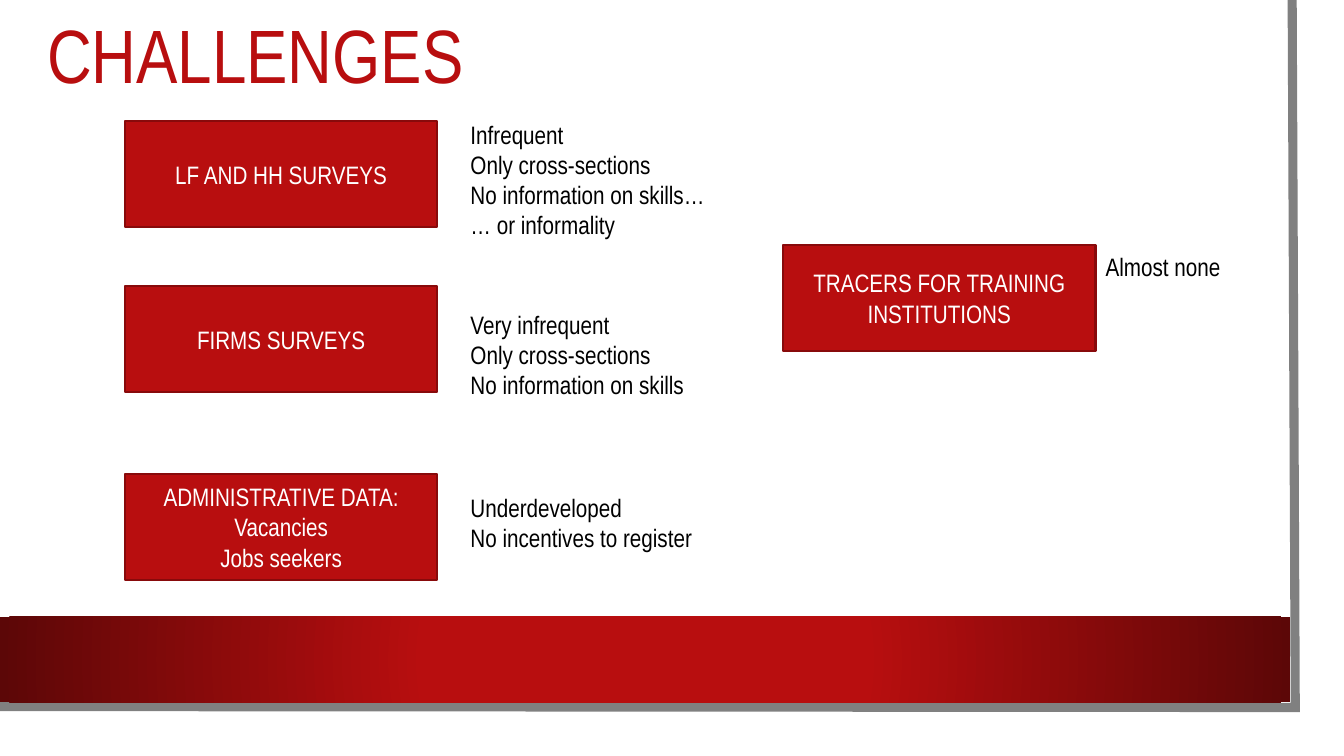
"""Build the slide on the challenges of labour market data sources."""
import pptx
import pptx.dml.color
import pptx.enum.shapes
import pptx.enum.text
import pptx.oxml.ns
import pptx.util
from lxml import etree

Pt = pptx.util.Pt
RGBColor = pptx.dml.color.RGBColor
RECTANGLE = pptx.enum.shapes.MSO_SHAPE.RECTANGLE
ANCHOR = pptx.enum.text.MSO_ANCHOR
ALIGN = pptx.enum.text.PP_ALIGN
AUTO_SIZE = pptx.enum.text.MSO_AUTO_SIZE
qn = pptx.oxml.ns.qn

RED = RGBColor(0xB8, 0x0E, 0x0F)
DARK_RED = RGBColor(0x5C, 0x07, 0x07)
OUTLINE_RED = RGBColor(0x88, 0x0A, 0x0B)
GRAY = RGBColor(0x80, 0x80, 0x80)
WHITE = RGBColor(0xFF, 0xFF, 0xFF)
BLACK = RGBColor(0, 0, 0)

BOX_LEFT, BOX_WIDTH, BOX_HEIGHT = 89.3, 223.2, 75.8
NOTE_LEFT, NOTE_WIDTH, LINE_HEIGHT, NOTE_PADDING = 329, 249.8, 21.8, 7.2

SOURCES = [
    (86.4, "LF AND HH SURVEYS", 81.4,
     "Infrequent\nOnly cross-sections\nNo information on skills…\n… or informality"),
    (204.5, "FIRMS SURVEYS", 217.4,
     "Very infrequent\nOnly cross-sections\nNo information on skills"),
    (338.4, "ADMINISTRATIVE DATA:\nVacancies\nJobs seekers", 347.8,
     "Underdeveloped\nNo incentives to register"),
]


class SlideBuilder:
    """Hold the text style and the slide, and add elements to it."""

    def __init__(self, slide, font_name="Arial Narrow", font_size=18):
        self.slide = slide
        self.font_name = font_name
        self.font_size = font_size

    def set_text(self, shape, text, color, size=None, align=ALIGN.LEFT):
        """Fill a shape with styled paragraphs, one for each line."""
        frame = shape.text_frame
        frame.text = text
        frame.word_wrap = True
        for paragraph in frame.paragraphs:
            paragraph.alignment = align
            for run in paragraph.runs:
                run.font.name = self.font_name
                run.font.size = Pt(size or self.font_size)
                run.font.color.rgb = color
        return frame

    def title(self, text, left, top, width, height):
        """Add the large heading."""
        shape = self.slide.shapes.add_textbox(Pt(left), Pt(top), Pt(width), Pt(height))
        frame = self.set_text(shape, text, RED, size=54)
        frame.vertical_anchor = ANCHOR.MIDDLE
        frame.paragraphs[0].line_spacing = 0.9

    def rectangle(self, left, top, width, height):
        """Add a plain rectangle without shadow."""
        shape = self.slide.shapes.add_shape(
            RECTANGLE, Pt(left), Pt(top), Pt(width), Pt(height))
        shape.shadow.inherit = False
        return shape

    def source_box(self, text, left, top):
        """Add a red box naming a data source."""
        shape = self.rectangle(left, top, BOX_WIDTH, BOX_HEIGHT)
        shape.fill.solid()
        shape.fill.fore_color.rgb = RED
        shape.line.color.rgb = OUTLINE_RED
        shape.line.width = Pt(1.5)
        frame = self.set_text(shape, text, WHITE, align=ALIGN.CENTER)
        frame.vertical_anchor = ANCHOR.MIDDLE

    def note(self, text, left, top, width):
        """Add the remarks on a data source."""
        height = LINE_HEIGHT * len(text.splitlines()) + NOTE_PADDING
        shape = self.slide.shapes.add_textbox(Pt(left), Pt(top), Pt(width), Pt(height))
        frame = self.set_text(shape, text, BLACK)
        frame.auto_size = AUTO_SIZE.SHAPE_TO_FIT_TEXT

    def page_edge(self, points):
        """Add the thick gray edge along the right and bottom sides."""
        corners = [(Pt(x), Pt(y)) for x, y in points]
        builder = self.slide.shapes.build_freeform(*corners[0])
        builder.add_line_segments(corners[1:], close=False)
        shape = builder.convert_to_shape()
        shape.shadow.inherit = False
        shape.fill.background()
        shape.line.color.rgb = GRAY
        shape.line.width = Pt(6.5)
        outline = shape.element.spPr.find(qn("a:ln"))
        etree.SubElement(outline, qn("a:miter"), lim="800000")

    def gradient_band(self, left, top, width, height):
        """Add the footer band that darkens away from its centre."""
        shape = self.rectangle(left, top, width, height)
        shape.line.fill.background()
        shape.fill.gradient()
        stops = zip(shape.fill.gradient_stops, (0.34, 1), (RED, DARK_RED))
        for stop, position, color in stops:
            stop.position = position
            stop.color.rgb = color
        gradient = shape.element.spPr.find(qn("a:gradFill"))
        gradient.remove(gradient.find(qn("a:lin")))
        circle = etree.SubElement(gradient, qn("a:path"), path="circle")
        etree.SubElement(circle, qn("a:fillToRect"), l="50000", t="50000",
                         r="50000", b="50000")


def main():
    """Create the presentation and save it."""
    presentation = pptx.Presentation()
    presentation.slide_width = Pt(960)
    presentation.slide_height = Pt(540)
    slide = presentation.slides.add_slide(presentation.slide_layouts[6])
    builder = SlideBuilder(slide)

    builder.page_edge([(923, 0), (925.2, 505.4), (-2.2, 504.7)])
    builder.gradient_band(0, 440.6, 921.6, 61.2)
    builder.title("CHALLENGES", 26.6, -2.9, 818.6, 90.7)
    for box_top, name, note_top, remarks in SOURCES:
        builder.source_box(name, BOX_LEFT, box_top)
        builder.note(remarks, NOTE_LEFT, note_top, NOTE_WIDTH)
    builder.source_box("TRACERS FOR TRAINING INSTITUTIONS", 559.4, 175)
    builder.note("Almost none", 782.6, 175.7, 170)

    presentation.save("out.pptx")


if __name__ == "__main__":
    main()
